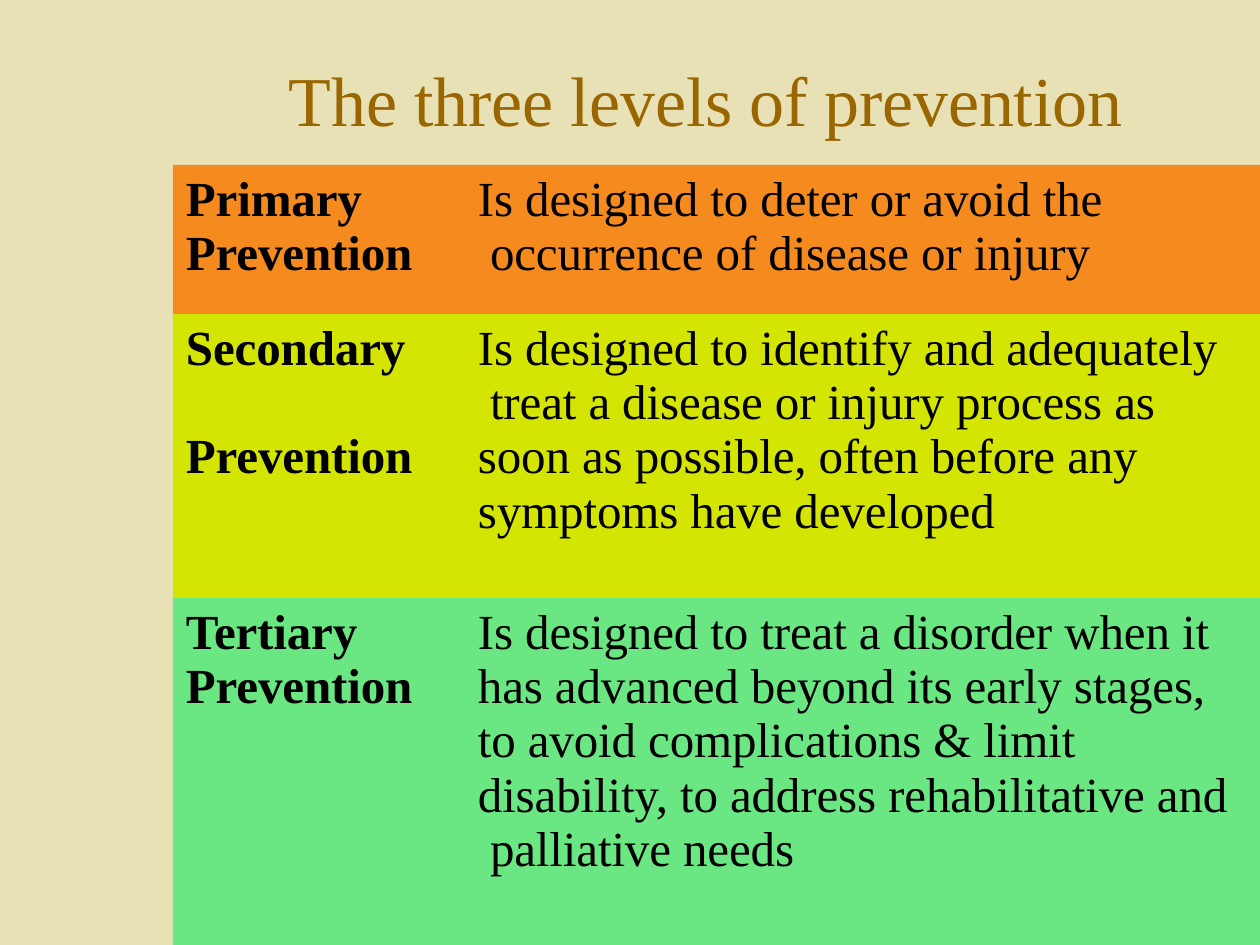
import pptx
import pptx.dml.color
import pptx.enum.shapes
import pptx.enum.text
import pptx.util

PX = 914400 // 126
FONT = "Times New Roman"

RGBColor = pptx.dml.color.RGBColor
SAND = RGBColor(0xE8, 0xE1, 0xB5)
BROWN = RGBColor(0x99, 0x66, 0x00)
BLACK = RGBColor(0x00, 0x00, 0x00)
ORANGE = RGBColor(0xF5, 0x8A, 0x1F)
LIME = RGBColor(0xD5, 0xE5, 0x03)
GREEN = RGBColor(0x6A, 0xE6, 0x82)

LEVELS = [
    (165, 149, ORANGE,
     (232, 117, "Primary\vPrevention"),
     (633, 117, "Is designed to deter or avoid the\v occurrence of disease or injury")),
    (314, 284, LIME,
     (232, 117, "Secondary\nPrevention"),
     (747, 227, "Is designed to identify and adequately\v treat a disease or injury process as\v"
      "soon as possible, often before any\vsymptoms have developed")),
    (598, 347, GREEN,
     (232, 117, "Tertiary\vPrevention"),
     (761, 281, "Is designed to treat a disorder when it\vhas advanced beyond its early stages,\v"
      "to avoid complications & limit\vdisability, to address rehabilitative and\v"
      " palliative needs")),
]
COLUMNS = [(173, 292), (465, 795)]


def add_panel(left, top, width, height, color):
    panel = page.shapes.add_shape(
        pptx.enum.shapes.MSO_SHAPE.RECTANGLE, left * PX, top * PX, width * PX, height * PX)
    panel.shadow.inherit = False
    panel.fill.solid()
    panel.fill.fore_color.rgb = color
    panel.line.fill.background()
    return panel


def format_text(frame, margin_top, size, color, bold, tracking):
    frame.word_wrap = True
    frame.auto_size = pptx.enum.text.MSO_AUTO_SIZE.NONE
    frame.vertical_anchor = pptx.enum.text.MSO_ANCHOR.TOP
    frame.margin_left = 2 * PX
    frame.margin_top = margin_top * PX
    frame.margin_right = frame.margin_bottom = 0
    for para in frame.paragraphs:
        para.alignment = pptx.enum.text.PP_ALIGN.LEFT
        for span in para.runs:
            span.font.name = FONT
            span.font.size = pptx.util.Pt(size)
            span.font.color.rgb = color
            span.font.bold = bold
            span._r.get_or_add_rPr().set("spc", str(tracking))


deck = pptx.Presentation()
deck.slide_width = pptx.util.Inches(10)
deck.slide_height = pptx.util.Inches(7.5)
page = deck.slides.add_slide(deck.slide_layouts[5])

backdrop = add_panel(0, 0, 1260, 945, SAND)
page.shapes._spTree.insert(2, backdrop._element)

title = page.shapes.title
title.left, title.top, title.width, title.height = 287 * PX, 55 * PX, 843 * PX, 87 * PX
title.text_frame.text = "The three levels of prevention"
format_text(title.text_frame, 2, 40, BROWN, False, -10)

for top, height, color, *texts in LEVELS:
    for (left, width), (box_width, box_height, text) in zip(COLUMNS, texts):
        add_panel(left, top, width, height, color)
        box = page.shapes.add_textbox(
            (left + 11) * PX, (top - 1) * PX, box_width * PX, box_height * PX)
        box.text_frame.text = text
        format_text(box.text_frame, 8, 28, BLACK, left == COLUMNS[0][0], -5)
        for order, para in enumerate(box.text_frame.paragraphs):
            para.line_spacing = pptx.util.Pt(31)
            para.space_before = pptx.util.Pt(31 * order)

deck.save("out.pptx")
